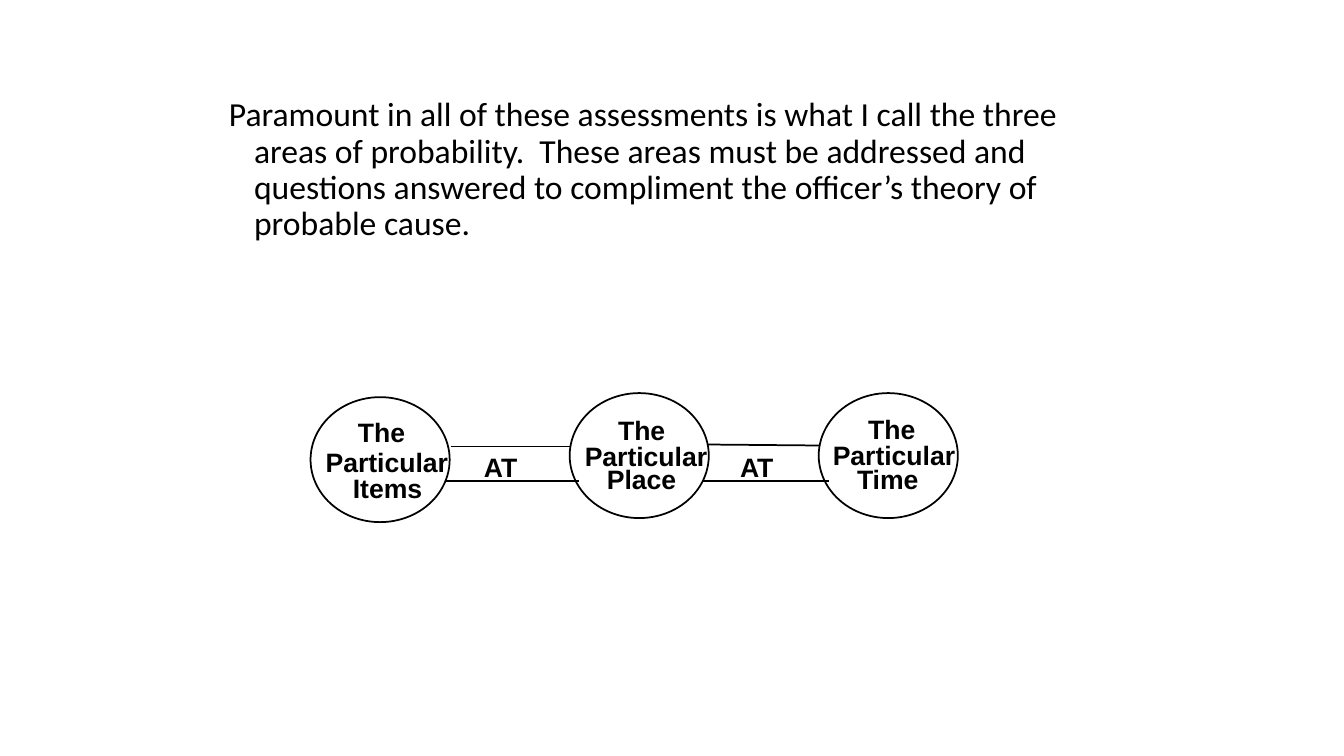
from lxml.etree import SubElement
from pptx import Presentation
from pptx.dml.color import RGBColor
from pptx.enum.shapes import MSO_CONNECTOR, MSO_SHAPE
from pptx.enum.text import MSO_ANCHOR
from pptx.oxml.ns import qn
from pptx.util import Inches, Pt

INK = "000000"
BODY = {"name": "Calibri", "size": Pt(24), "bold": False}
LABEL = {"name": "Arial", "size": Pt(19), "bold": True}
FLUSH = {"margin_left": 0, "margin_right": 0, "margin_top": 0,
         "margin_bottom": 0, "word_wrap": False}
SPACING = {"line_spacing": 0.9, "space_before": Pt(10)}
INTRO = ("Paramount in all of these assessments is what I call the three "
         "areas of probability.  These areas must be addressed and questions "
         "answered to compliment the officer’s theory of probable cause.")

# Circle left and top, then each word with its left, top and width
AREAS = [
    (3.08, 3.94, [("The", 3.55, 4.13, 0.48), ("Particular", 3.23, 4.42, 1.23),
                  ("Items", 3.5, 4.68, 0.7)]),
    (5.65, 3.9, [("The", 6.13, 4.11, 0.48), ("Particular", 5.8, 4.36, 1.23),
                 ("Place", 6.02, 4.59, 0.7)]),
    (8.12, 3.9, [("The", 8.61, 4.1, 0.48), ("Particular", 8.26, 4.35, 1.23),
                 ("Time", 8.5, 4.59, 0.62)]),
]
LINKS = [(4.47, 4.43, 5.66, 4.43), (4.41, 4.77, 5.74, 4.77),
         (7.02, 4.41, 8.13, 4.42), (6.97, 4.77, 8.22, 4.77)]
JOINS = [4.8, 7.34]


def color(code):
    return RGBColor.from_string(code)


def apply(target, values):
    for name, value in values.items():
        setattr(target, name, value)


def write(para, text, style):
    run = para.add_run()
    run.text = text
    apply(run.font, style)
    run.font.color.rgb = color(INK)


def stroke(line):
    line.color.rgb = color(INK)
    line.width = Pt(1.25)


def add_intro(slide):
    body = slide.placeholders[1]
    apply(body, {"left": Inches(2.17), "top": Inches(0.92),
                 "width": Inches(8.42), "height": Inches(1.75)})
    body.text_frame.vertical_anchor = MSO_ANCHOR.TOP
    para = body.text_frame.paragraphs[0]
    apply(para, SPACING)
    props = para._p.get_or_add_pPr()
    props.set("marL", str(Inches(0.25)))
    props.set("indent", str(Inches(-0.25)))
    SubElement(props, qn("a:buNone"))
    write(para, INTRO, BODY)


def add_label(slide, text, left, top, width):
    box = slide.shapes.add_textbox(
        Inches(left), Inches(top), Inches(width), Inches(0.32))
    apply(box.text_frame, FLUSH)
    write(box.text_frame.paragraphs[0], text, LABEL)


def add_circle(slide, left, top):
    oval = slide.shapes.add_shape(
        MSO_SHAPE.OVAL, Inches(left), Inches(top), Inches(1.38), Inches(1.24))
    oval.shadow.inherit = False
    oval.fill.background()
    stroke(oval.line)


def add_link(slide, *ends):
    link = slide.shapes.add_connector(
        MSO_CONNECTOR.STRAIGHT, *[Inches(end) for end in ends])
    stroke(link.line)
    SubElement(link._element.spPr, qn("a:effectLst"))


def main():
    deck = Presentation()
    deck.slide_width, deck.slide_height = Inches(13.33), Inches(7.5)
    slide = deck.slides.add_slide(deck.slide_layouts[1])
    title = slide.shapes.title._element
    title.getparent().remove(title)
    add_intro(slide)
    for left, top, words in AREAS:
        add_circle(slide, left, top)
        for word in words:
            add_label(slide, *word)
    for ends in LINKS:
        add_link(slide, *ends)
    for left in JOINS:
        add_label(slide, "AT", left, 4.47, 0.34)
    deck.save("out.pptx")


if __name__ == "__main__":
    main()
